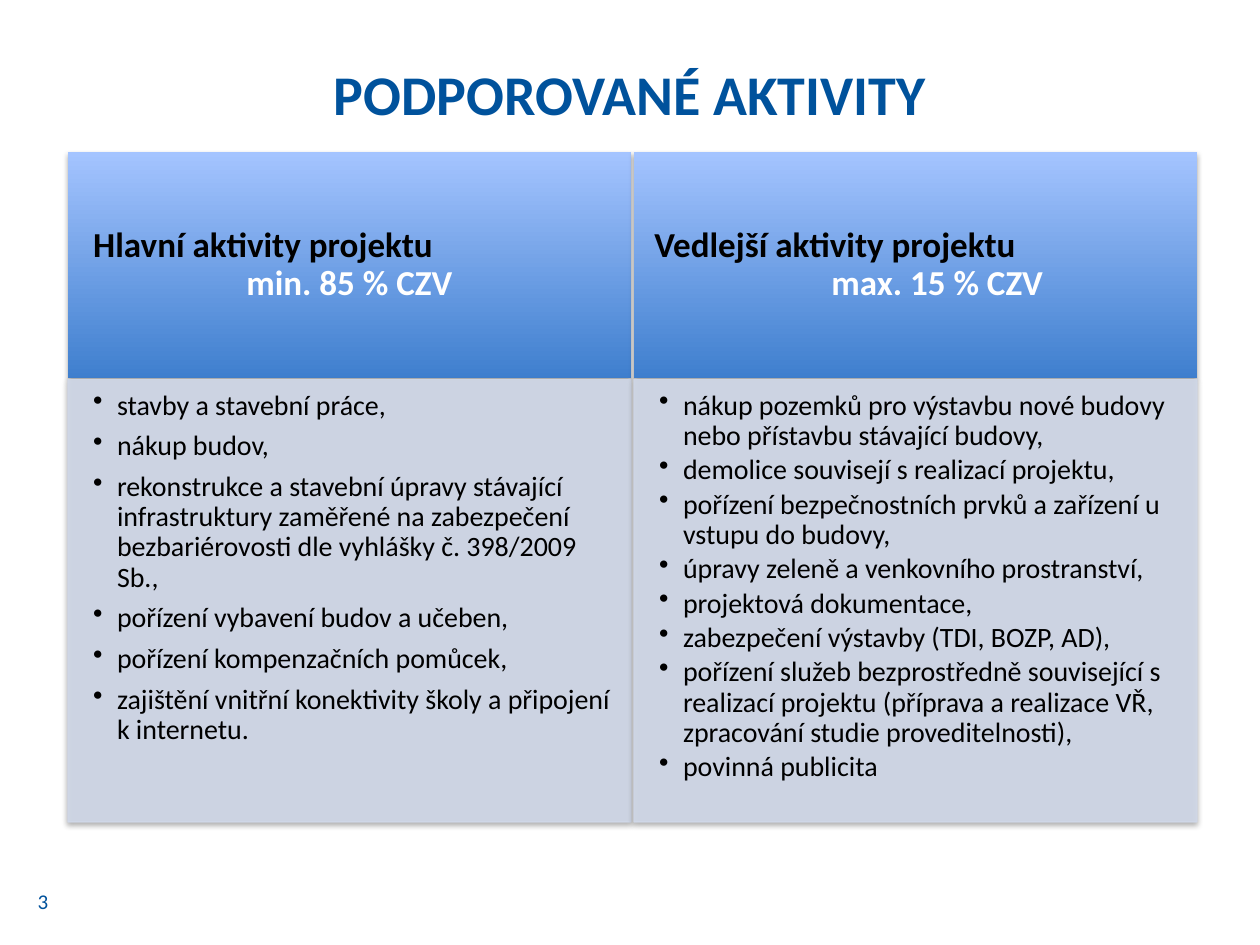
from lxml import etree
from pptx import Presentation
from pptx.dml.color import RGBColor
from pptx.enum.shapes import MSO_SHAPE as Shape
from pptx.enum.text import MSO_ANCHOR as Anchor, PP_ALIGN as Align
from pptx.oxml.ns import qn
from pptx.util import Cm, Pt

FONT = "Calibri"
BLUE, BLACK, WHITE = "00529C", "000000", "FFFFFF"
GRADIENT = ("3F7FCE", "A4C4FF")
PANEL = "D0D8E8"
COLUMN_WIDTH = 11.35
HEADER_TOP, HEADER_HEIGHT = 3.07, 4.55
LIST_TOP, LIST_HEIGHT = 7.65, 8.92

# left, heading, heading indent, share, share indent, space after items, items
COLUMNS = [
    (1.37, "Hlavní aktivity projektu", 0.1, "min. 85 % CZV", 0, 6, [
        "stavby a stavební práce,",
        "nákup budov,",
        "rekonstrukce a stavební úpravy stávající infrastruktury zaměřené na "
        "zabezpečení bezbariérovosti dle vyhlášky č. 398/2009 Sb.,",
        "pořízení vybavení budov a učeben,",
        "pořízení kompenzačních pomůcek,",
        "zajištění vnitřní konektivity školy a připojení k internetu.",
    ]),
    (12.78, "Vedlejší aktivity projektu", 0, "max. 15 % CZV", 0.88, 2.4, [
        "nákup pozemků pro výstavbu nové budovy nebo přístavbu stávající budovy,",
        "demolice souvisejí s realizací projektu,",
        "pořízení bezpečnostních prvků a zařízení u vstupu do budovy,",
        "úpravy zeleně a venkovního prostranství,",
        "projektová dokumentace,",
        "zabezpečení výstavby (TDI, BOZP, AD),",
        "pořízení služeb bezprostředně související s realizací projektu "
        "(příprava a realizace VŘ, zpracování studie proveditelnosti),",
        "povinná publicita",
    ]),
]


def rgb(value):
    return RGBColor.from_string(value)


def add_child(parent, tag, **attributes):
    return etree.SubElement(parent, qn(tag), attributes)


def set_alpha(color_parent, percent):
    add_child(color_parent.find(".//" + qn("a:srgbClr")), "a:alpha", val=str(percent * 1000))


def add_shadow(shape):
    """Put a soft shadow just below the shape."""
    shape.shadow.inherit = False
    effects = shape._element.spPr.find(qn("a:effectLst"))
    shadow = add_child(effects, "a:outerShdw", blurRad=str(Pt(3.1)), dist=str(Pt(1.8)),
                       dir="5400000", rotWithShape="0")
    add_child(shadow, "a:srgbClr", val=BLACK)
    set_alpha(shadow, 35)


def set_frame(shape, margins, anchor):
    frame = shape.text_frame
    frame.word_wrap = True
    frame.vertical_anchor = anchor
    frame.margin_left, frame.margin_top, frame.margin_right, frame.margin_bottom = map(Cm, margins)
    return frame


def add_text(frame, text, size=16, color=BLACK, bold=False, align=Align.LEFT,
             spacing=0.9, after=0, indent=0, hanging=0, bullet=None):
    """Write one paragraph, using the empty first one when there is one."""
    first = frame.paragraphs[0]
    paragraph = frame.add_paragraph() if first.runs else first
    properties = paragraph._p.get_or_add_pPr()
    properties.set("marL", str(Cm(indent)))
    properties.set("indent", str(Cm(-hanging)))
    if bullet:
        add_child(properties, "a:buChar", char=bullet)
    paragraph.alignment = align
    paragraph.line_spacing = spacing
    paragraph.space_before = Pt(0)
    paragraph.space_after = Pt(after)
    run = paragraph.add_run()
    run.text = text
    font = run.font
    font.name, font.size, font.bold = FONT, Pt(size), bold
    font.color.rgb = rgb(color)


def add_label(slide, left, top, width, height, text, **text_format):
    box = slide.shapes.add_textbox(Cm(left), Cm(top), Cm(width), Cm(height))
    frame = set_frame(box, (0.25, 0.13, 0.25, 0.13), Anchor.MIDDLE)
    add_text(frame, text, spacing=1, **text_format)


def add_rectangle(slide, left, top, height):
    shape = slide.shapes.add_shape(Shape.RECTANGLE, Cm(left), Cm(top),
                                   Cm(COLUMN_WIDTH), Cm(height))
    add_shadow(shape)
    return shape


def add_header(slide, left, heading, heading_indent, share, share_indent):
    shape = add_rectangle(slide, left, HEADER_TOP, HEADER_HEIGHT)
    shape.line.fill.background()
    shape.fill.gradient()
    shape.fill.gradient_angle = 90
    for stop, color in zip(shape.fill.gradient_stops, GRADIENT):
        stop.color.rgb = rgb(color)
    frame = set_frame(shape, (0.41, 0.23, 0.41, 0.23), Anchor.MIDDLE)
    add_text(frame, heading, size=20, bold=True, indent=heading_indent)
    add_text(frame, share, size=20, bold=True, color=WHITE, align=Align.CENTER,
             indent=share_indent)


def add_activity_list(slide, left, items, after):
    shape = add_rectangle(slide, left, LIST_TOP, LIST_HEIGHT)
    shape.fill.solid()
    shape.fill.fore_color.rgb = rgb(PANEL)
    shape.line.color.rgb = rgb(PANEL)
    shape.line.width = Pt(0.75)
    properties = shape._element.spPr
    for tag in ("a:solidFill", "a:ln"):
        set_alpha(properties.find(qn(tag)), 90)
    frame = set_frame(shape, (0.23, 0.23, 0.3, 0.36), Anchor.TOP)
    for item in items:
        add_text(frame, item, after=after, indent=0.76, hanging=0.48, bullet="•")


def main():
    presentation = Presentation()
    presentation.slide_width, presentation.slide_height = Cm(25.4), Cm(19.05)
    slide = presentation.slides.add_slide(presentation.slide_layouts[6])
    add_label(slide, 1.27, 0.74, 22.86, 2.29, "PODPOROVANÉ AKTIVITY",
              size=32, color=BLUE, bold=True, align=Align.CENTER)
    add_label(slide, 0.51, 17.65, 1.4, 1.02, "3", size=12, color=BLUE)
    for left, heading, heading_indent, share, share_indent, after, items in COLUMNS:
        add_header(slide, left, heading, heading_indent, share, share_indent)
        add_activity_list(slide, left, items, after)
    presentation.save("out.pptx")


if __name__ == "__main__":
    main()
